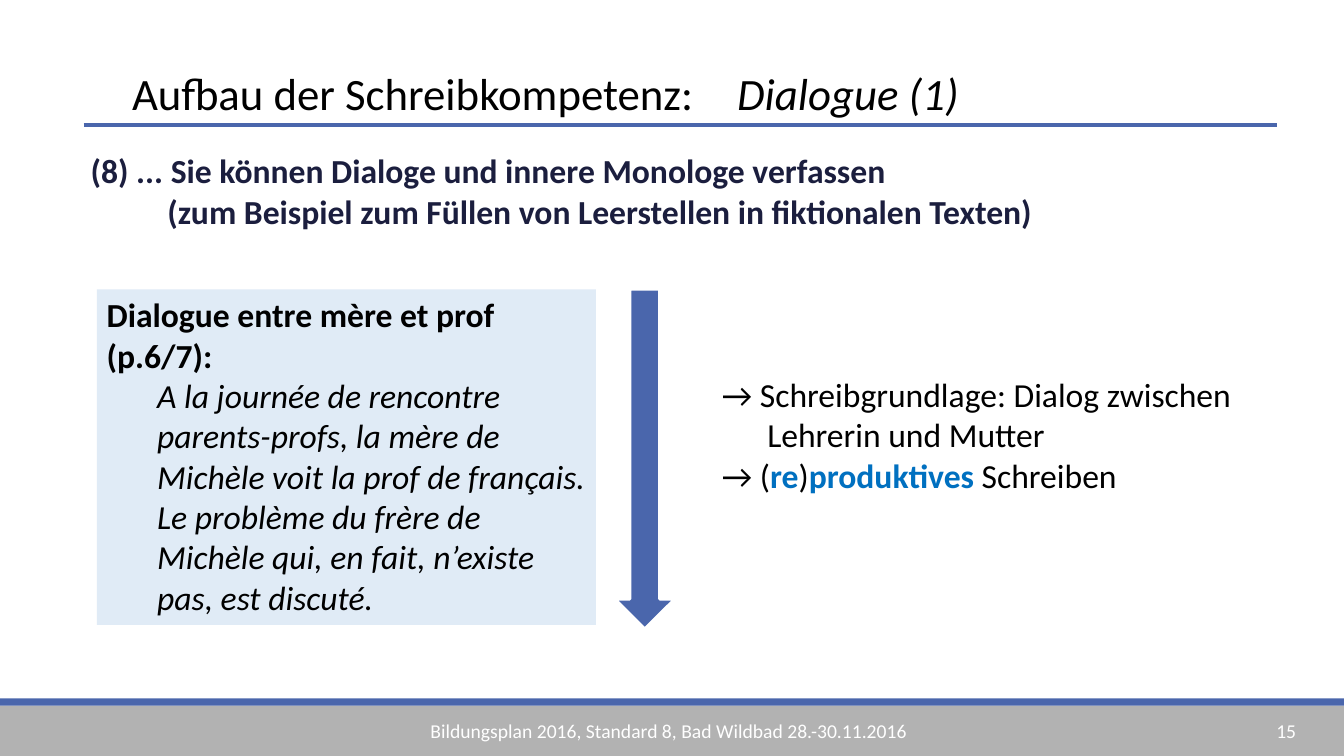
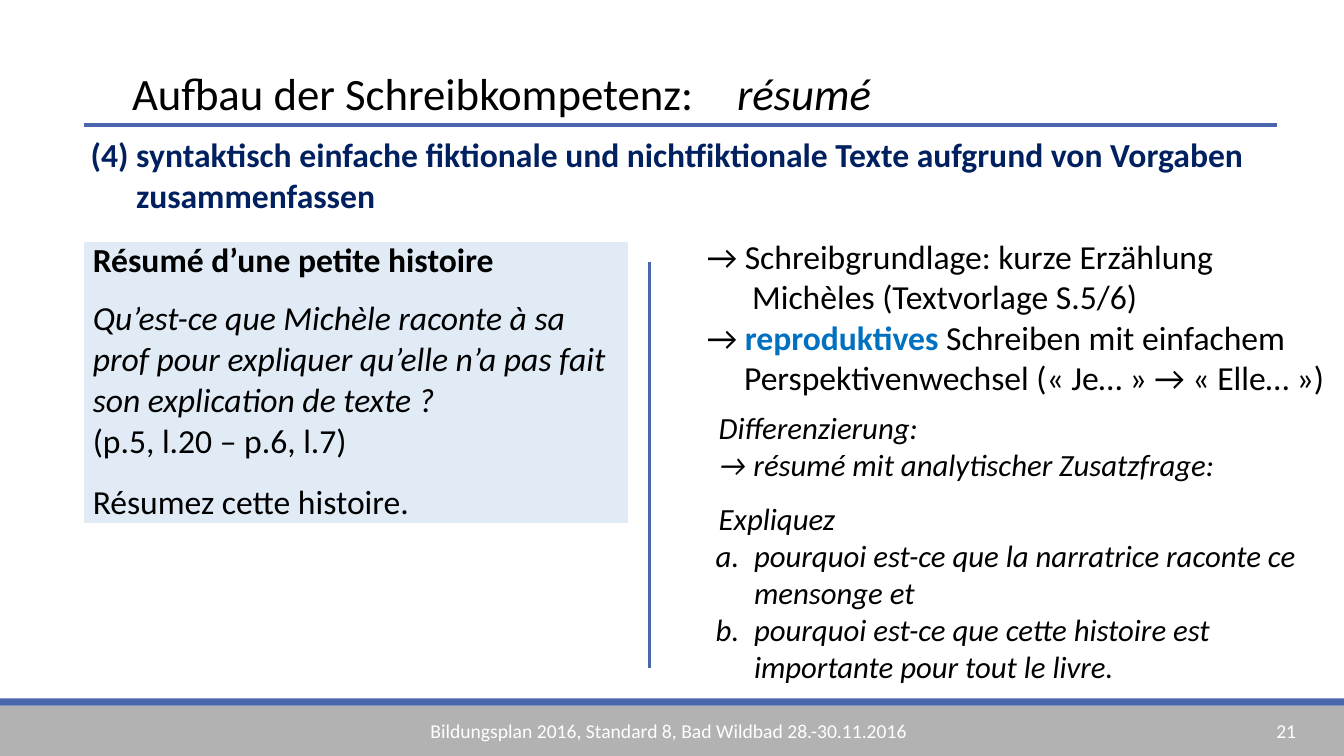
"""Builds two slides on writing skills: a dialogue task and a summary task."""
from collections import namedtuple
from dataclasses import dataclass

from lxml.etree import SubElement
from pptx import Presentation
from pptx.dml.color import RGBColor
from pptx.enum.shapes import MSO_CONNECTOR as Line, MSO_SHAPE as Shape
from pptx.enum.text import MSO_ANCHOR as Anchor, MSO_AUTO_SIZE as Fit, PP_ALIGN as Align
from pptx.oxml.ns import qn
from pptx.util import Inches, Pt


@dataclass(frozen=True)
class Theme:
    """Colours, font and type sizes."""
    accent: str = "4A66AC"
    band: str = "B2B2B2"
    panel: str = "E0EBF6"
    white: str = "FFFFFF"
    black: str = "000000"
    highlight: str = "0070C0"
    font: str = "Calibri"
    title: int = 32
    text: int = 24
    detail: int = 22
    footer: int = 14
    rule: float = 2.25


T = Theme()
WIDTH, HEIGHT = 13.33, 7.5
MARGIN, RULE_Y, BAND_Y, STRIP = 0.83, 1.24, 7, 0.07
TITLE_BOX = (1.21, 0.6, 11.56, 0.64)
TITLE_TAB = 5.87
FOOTER = "Bildungsplan 2016, Standard 8, Bad Wildbad 28.-30.11.2016"
FOOTER_Y, FOOTER_H = 7.08, 0.34

Para = namedtuple("Para", "runs left hang before number", defaults=(0, 0, 0, False))

TITLE = "Aufbau der Schreibkompetenz:"
SLIDES = [
    dict(
        number="15", topic="Dialogue (1)",
        standard=dict(
            box=(MARGIN, 1.5, 11.83, 1), color="1B1E3E",
            paras=[Para([("(8) ... Sie können Dialoge und innere Monologe verfassen\n"
                          "(zum Beispiel zum Füllen von Leerstellen in fiktionalen Texten)", "b")],
                        0.76, 0.76)]),
        notes=dict(
            box=(7.06, 3.66, 5.86, 1.72),
            paras=[
                Para([("→ Schreibgrundlage: Dialog zwischen\nLehrerin und Mutter", "")], 0.45, 0.45),
                Para([("→ (", ""), ("re", "bh"), (")", ""), ("produktives", "bh"),
                      (" Schreiben", "")])]),
    ),
    dict(
        number="21", topic="résumé",
        standard=dict(
            box=(MARGIN, 1.35, 11.71, 1), color="002060",
            paras=[Para([("(4) syntaktisch einfache fiktionale und nichtfiktionale Texte "
                          "aufgrund von Vorgaben\nzusammenfassen", "b")], 0.45, 0.45)]),
        notes=dict(
            box=(6.91, 2.29, 6.42, 1.72),
            paras=[
                Para([("→ Schreibgrundlage: kurze Erzählung\nMichèles (Textvorlage S.5/6)", "")],
                     0.45, 0.45),
                Para([("→ ", ""), ("reproduktives", "bh"),
                      (" Schreiben mit einfachem\nPerspektivenwechsel («\u00a0Je…\u00a0» → «\u00a0Elle…\u00a0»)"
                       .replace("\u00a0", " "), "")], 0.37, 0.37)]),
    ),
]

DIALOGUE_BOX = (0.96, 2.87, 4.95, 3.33)
DIALOGUE = [
    Para([("Dialogue entre mère et prof (p.6/7):", "b")]),
    Para([("A la journée de rencontre parents-profs, la mère de Michèle voit la prof de "
           "français. Le problème du frère de Michèle qui, en fait, n’existe pas, est discuté.",
           "i")], 0.5),
]
ARROW_BOX = (6.1, 2.87, 0.59, 3.37)

SUMMARY_BOX = (MARGIN, 2.39, 5.4, 2.77)
SUMMARY = [
    Para([("Résumé d’une petite histoire", "b")], 0.04),
    Para([("Qu’est-ce que Michèle raconte à sa prof pour expliquer qu’elle n’a pas fait son "
           "explication de texte ?\n", "i"), ("(p.5, l.20 – p.6, l.7)", "")], 0.04, 0, 12),
    Para([("Résumez cette histoire.", "")], 0.04, 0, 14.5),
]
DIVIDER = (6.44, 2.6, 6.44, 6.63)
EXTENSION_BOX = (7, 4.01, 6.25, 2.86)
EXTENSION = [
    Para([("Differenzierung:", "i")], 0.03),
    Para([("→ résumé mit analytischer Zusatzfrage:", "i")], 0.03),
    Para([("Expliquez", "i")], 0.03, 0, 12),
    Para([("pourquoi est-ce que la narratrice raconte ce mensonge et", "i")],
         0.38, 0.38, 0, True),
    Para([("pourquoi est-ce que cette histoire est importante pour tout le livre.", "i")],
         0.38, 0.38, 0, True),
]


def rgb(code):
    """Returns the colour for a hex code."""
    return RGBColor.from_string(code)


def inches(box):
    """Converts lengths to slide units."""
    return [Inches(v) for v in box]


def place(sp, box):
    """Moves and sizes a shape."""
    sp.left, sp.top, sp.width, sp.height = inches(box)


def add_run(p, text, style, size, color):
    """Adds one run; b is bold, i italic, h highlighted."""
    r = p.add_run()
    r.text = text
    f = r.font
    f.name, f.size = T.font, Pt(size)
    f.bold, f.italic = "b" in style, "i" in style
    f.color.rgb = rgb(T.highlight if "h" in style else color)


def write(tf, paras, size=T.text, color=T.black):
    """Fills a text frame with paragraphs."""
    for i, para in enumerate(paras):
        p = tf.paragraphs[0] if i == 0 else tf.add_paragraph()
        p.alignment = Align.LEFT
        p.space_before = Pt(para.before)
        pPr = p._p.get_or_add_pPr()
        pPr.set("marL", str(Inches(para.left)))
        pPr.set("indent", str(-Inches(para.hang)))
        if para.number:
            SubElement(pPr, qn("a:buAutoNum"), type="alphaLcPeriod")
        else:
            SubElement(pPr, qn("a:buNone"))
        for text, style in para.runs:
            for j, part in enumerate(text.split("\n")):
                if j:
                    p.add_line_break()
                if part:
                    add_run(p, part, style, size, color)


def set_frame(tf):
    """Makes a text frame wrap from its top edge at a fixed size."""
    tf.word_wrap, tf.auto_size, tf.vertical_anchor = True, Fit.NONE, Anchor.TOP


def add_text(s, box, paras, size=T.text, color=T.black):
    """Adds a text box."""
    tf = s.shapes.add_textbox(*inches(box)).text_frame
    set_frame(tf)
    write(tf, paras, size, color)


def add_block(s, kind, box, fill, line=None):
    """Adds a flat preset shape."""
    sp = s.shapes.add_shape(kind, *inches(box))
    sp.shadow.inherit = False
    sp.fill.solid()
    sp.fill.fore_color.rgb = rgb(fill)
    if line:
        sp.line.color.rgb, sp.line.width = rgb(line), Pt(2)
    else:
        sp.line.fill.background()
    return sp


def add_line(s, ends):
    """Adds an accent line."""
    line = s.shapes.add_connector(Line.STRAIGHT, *inches(ends))
    line.line.color.rgb, line.line.width = rgb(T.accent), Pt(T.rule)
    SubElement(line._element.spPr, qn("a:effectLst"))


def add_cell(s, box, paras, fill, inset, color=T.black):
    """Adds a table with a single cell."""
    table = s.shapes.add_table(1, 1, *inches(box)).table
    table.first_row = table.horz_banding = False
    cell = table.cell(0, 0)
    cell.fill.solid()
    cell.fill.fore_color.rgb = rgb(fill)
    cell.margin_left = cell.margin_right = Inches(inset)
    cell.margin_top = cell.margin_bottom = 0
    write(cell.text_frame, paras, color=color)


def add_base(prs, layout, page):
    """Adds a slide with its title, bands, footer, standard and notes."""
    s = prs.slides.add_slide(layout)
    add_block(s, Shape.RECTANGLE, (0, BAND_Y, WIDTH, HEIGHT - BAND_Y), T.band)
    add_block(s, Shape.RECTANGLE, (0, BAND_Y - STRIP, WIDTH, STRIP), T.accent)
    for left, width, text in ((4.17, 4.99, FOOTER), (12.56, 0.82, page["number"])):
        add_text(s, (left, FOOTER_Y, width, FOOTER_H), [Para([(text, "")])], T.footer, T.white)
    add_line(s, (MARGIN, RULE_Y, WIDTH - MARGIN + 0.17, RULE_Y))
    tf = s.shapes.title.text_frame
    set_frame(tf)
    write(tf, [Para([(TITLE + "\t", ""), (page["topic"], "i")])], T.title)
    tabs = SubElement(tf.paragraphs[0]._p.get_or_add_pPr(), qn("a:tabLst"))
    SubElement(tabs, qn("a:tab"), pos=str(Inches(TITLE_TAB)), algn="l")
    standard, notes = page["standard"], page["notes"]
    add_cell(s, standard["box"], standard["paras"], T.white, 0.07, standard["color"])
    body = s.placeholders[1]
    place(body, notes["box"])
    set_frame(body.text_frame)
    write(body.text_frame, notes["paras"])
    return s


def main():
    """Builds and saves the presentation."""
    prs = Presentation()
    prs.slide_width, prs.slide_height = Inches(WIDTH), Inches(HEIGHT)
    layout = prs.slide_layouts[1]
    place(layout.placeholders[0], TITLE_BOX)
    dialogue, summary = [add_base(prs, layout, page) for page in SLIDES]

    panel = add_block(dialogue, Shape.RECTANGLE, DIALOGUE_BOX, T.panel)
    set_frame(panel.text_frame)
    write(panel.text_frame, DIALOGUE)
    add_block(dialogue, Shape.DOWN_ARROW, ARROW_BOX, T.accent, T.white)

    add_cell(summary, SUMMARY_BOX, SUMMARY, T.panel, 0.05)
    add_line(summary, DIVIDER)
    add_text(summary, EXTENSION_BOX, EXTENSION, T.detail)
    prs.save("out.pptx")


if __name__ == "__main__":
    main()
